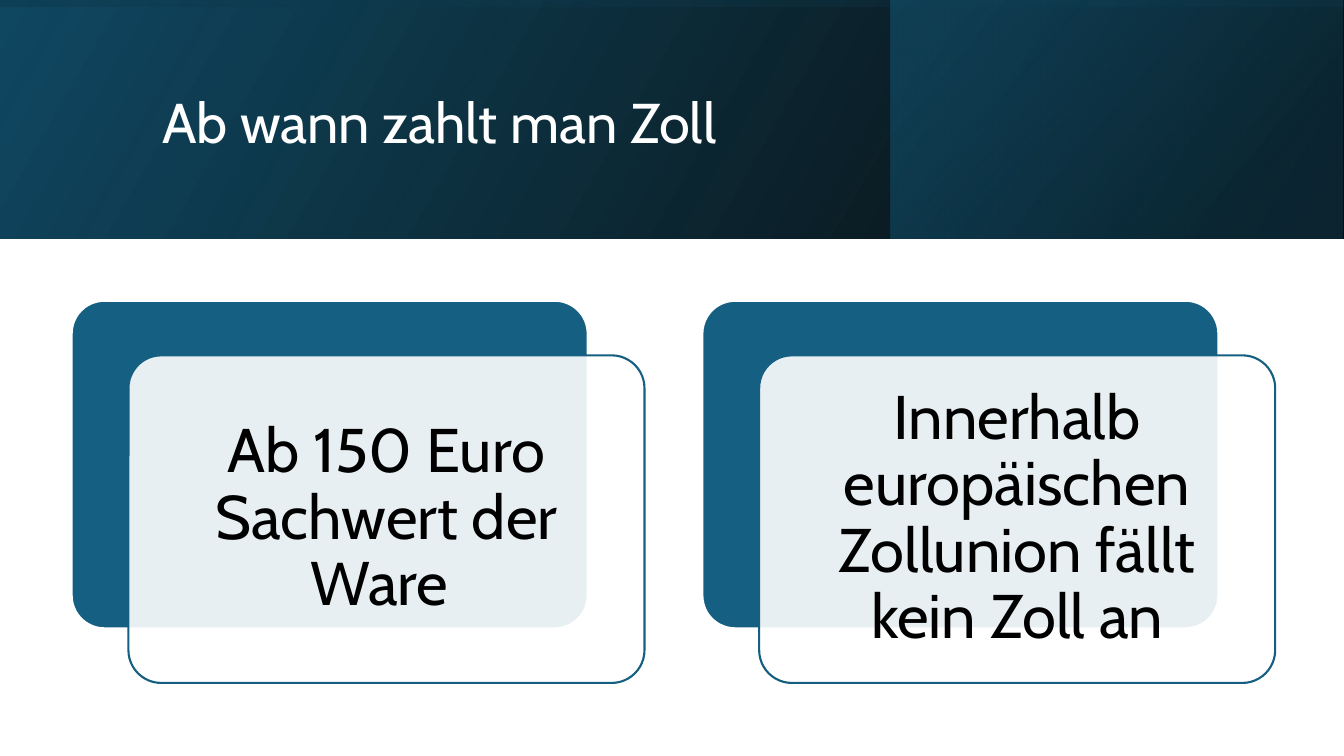
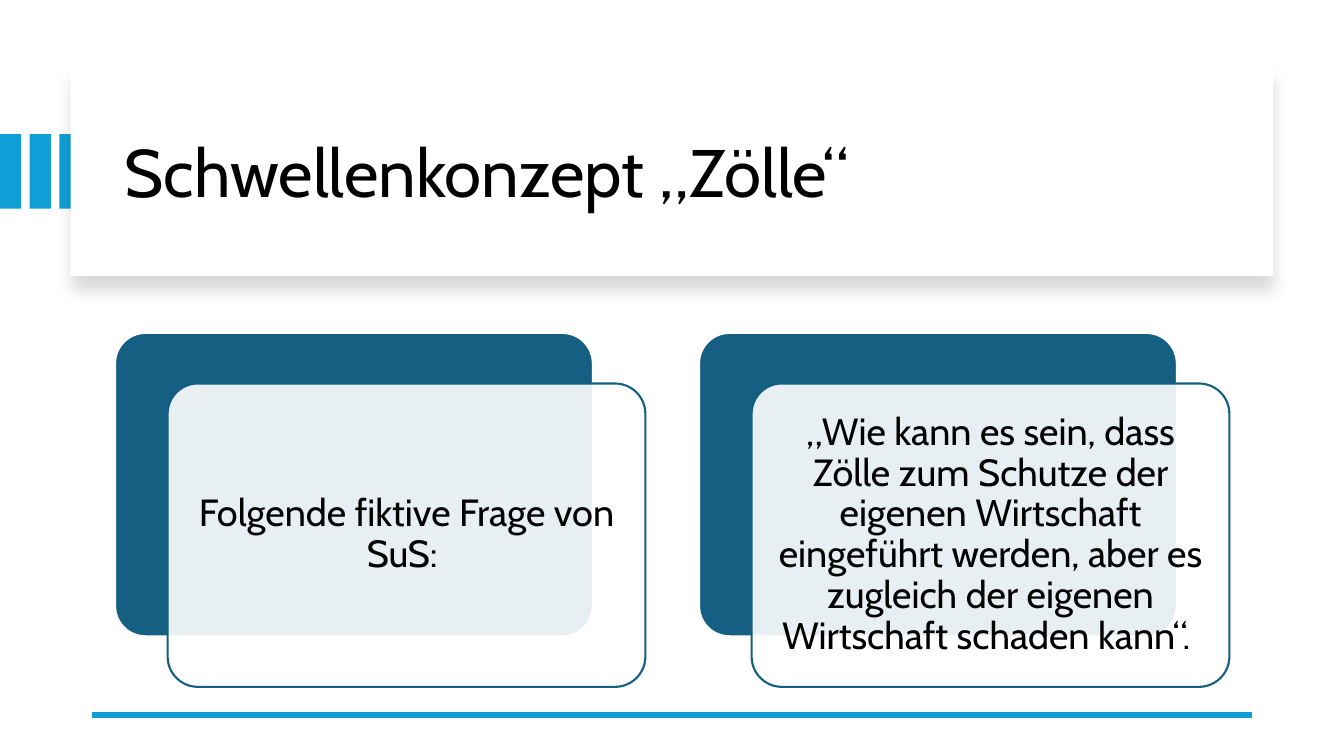
from lxml import etree
from pptx import Presentation
from pptx.dml.color import RGBColor
from pptx.enum.shapes import MSO_CONNECTOR, MSO_SHAPE
from pptx.enum.text import MSO_ANCHOR, PP_ALIGN
from pptx.oxml.ns import qn
from pptx.util import Pt

RECTANGLE = MSO_SHAPE.RECTANGLE
ROUNDED = MSO_SHAPE.ROUNDED_RECTANGLE
STRAIGHT = MSO_CONNECTOR.STRAIGHT
MIDDLE = MSO_ANCHOR.MIDDLE
LEFT, CENTER = PP_ALIGN.LEFT, PP_ALIGN.CENTER

WHITE = RGBColor(0xFF, 0xFF, 0xFF)
BLACK = RGBColor(0x00, 0x00, 0x00)
TEAL = RGBColor(0x15, 0x60, 0x82)
NAVY = RGBColor(0x10, 0x48, 0x62)
DARK_TEAL = RGBColor(0x0B, 0x30, 0x41)
SKY = RGBColor(0x0F, 0x9E, 0xD5)

FONT = "Cabin"
SLIDE_WIDTH, SLIDE_HEIGHT = 960, 540
BAND_HEIGHT = 170.6


def add_box(slide, kind, left, top, width, height, fill=None, line=None):
    shape = slide.shapes.add_shape(kind, Pt(left), Pt(top), Pt(width), Pt(height))
    shape.shadow.inherit = False
    if fill is not None:
        shape.fill.solid()
        shape.fill.fore_color.rgb = fill
    if line is None:
        shape.line.fill.background()
    else:
        shape.line.color.rgb = line
        shape.line.width = Pt(1.5)
    return shape


def write_text(shape, text, size, color, alignment, margins):
    frame = shape.text_frame
    frame_format = {"word_wrap": True, "vertical_anchor": MIDDLE}
    for side, margin in zip(("left", "top", "right", "bottom"), margins):
        frame_format[f"margin_{side}"] = Pt(margin)
    paragraph = frame.paragraphs[0]
    run = paragraph.add_run()
    run.text = text
    run.font.color.rgb = color
    formats = (
        (frame, frame_format),
        (paragraph, {"alignment": alignment, "line_spacing": 0.9}),
        (run.font, {"name": FONT, "size": Pt(size)}),
    )
    for target, values in formats:
        for name, value in values.items():
            setattr(target, name, value)


presentation = Presentation()
presentation.slide_width = Pt(SLIDE_WIDTH)
presentation.slide_height = Pt(SLIDE_HEIGHT)
blank_layout = presentation.slide_layouts[6]
customs_slide = presentation.slides.add_slide(blank_layout)
concept_slide = presentation.slides.add_slide(blank_layout)

turned_left = (SLIDE_WIDTH - BAND_HEIGHT) / 2
bands = [
    ((0, 0, SLIDE_WIDTH, BAND_HEIGHT), 0, 330,
     [(0, BLACK, 96), (100, NAVY, 100)]),
    ((636.5, 0, 322.7, BAND_HEIGHT), 0, 320,
     [(19, DARK_TEAL, 68), (100, TEAL, 48)]),
    ((turned_left, -turned_left, BAND_HEIGHT, SLIDE_WIDTH), 270, 350,
     [(23, NAVY, 16), (99, BLACK, 45)]),
]
for bounds, rotation, angle, stops in bands:
    band = add_box(customs_slide, RECTANGLE, *bounds)
    band.rotation = rotation
    band._element.spPr.find(qn("a:xfrm")).set("flipH", "1")
    band.fill.gradient()
    band.fill.gradient_angle = 360 - angle
    for stop, (position, color, opacity) in zip(band.fill.gradient_stops, stops):
        stop.position = position / 100
        stop.color.rgb = color
    for element, (_, _, opacity) in zip(band._element.spPr.iter(qn("a:srgbClr")), stops):
        etree.SubElement(element, qn("a:alpha")).set("val", str(opacity * 1000))

for stripe_index in range(3):
    add_box(concept_slide, RECTANGLE, stripe_index * 21.2, 95.8, 15.2, 53.3, SKY)

title_panel = add_box(concept_slide, RECTANGLE, 50.4, 48.2, 859, 149, WHITE)
effects = title_panel._element.spPr.find(qn("a:effectLst"))
shadow = etree.SubElement(effects, qn("a:outerShdw"))
shadow_format = {"blurRad": Pt(11), "dist": Pt(10), "dir": 90 * 60000, "algn": "t", "rotWithShape": 0}
for name, value in shadow_format.items():
    shadow.set(name, str(value))
shadow_color = etree.SubElement(shadow, qn("a:srgbClr"))
shadow_color.set("val", str(BLACK))
etree.SubElement(shadow_color, qn("a:alpha")).set("val", "15000")

titles = [
    (customs_slide, (108.7, 27.4, 765.4, 123.8), "Ab wann zahlt man Zoll", 40, WHITE),
    (concept_slide, (82, 64, 801.4, 122.4), "Schwellenkonzept „Zölle“", 48, BLACK),
]
for slide, bounds, text, size, color in titles:
    title = slide.shapes.add_textbox(*[Pt(length) for length in bounds])
    write_text(title, text, size, color, LEFT, (7.2, 3.6, 7.2, 3.6))

baseline = concept_slide.shapes.add_connector(STRAIGHT, Pt(66), Pt(510.5), Pt(894), Pt(510.5))
baseline.line.color.rgb = SKY
baseline.line.width = Pt(4.5)
etree.SubElement(baseline._element.spPr, qn("a:effectLst"))

card_rows = [
    (customs_slide, 51.2, 214.8, 368.6, 234, 44, 13.2, [
        "Ab 150 Euro Sachwert der Ware ",
        "Innerhalb europäischen Zollunion fällt kein Zoll an",
    ]),
    (concept_slide, 82.2, 237.8, 341.3, 216.7, 27, 8.1, [
        "Folgende fiktive Frage von SuS: ",
        "„Wie kann es sein, dass Zölle zum Schutze der eigenen Wirtschaft eingeführt "
        "werden, aber es zugleich der eigenen Wirtschaft schaden kann“. ",
    ]),
]
for slide, row_left, top, width, height, size, margin, texts in card_rows:
    for card_index, text in enumerate(texts):
        left = row_left + card_index * width * 11 / 9
        back = add_box(slide, ROUNDED, left, top, width, height, TEAL, WHITE)
        front = add_box(slide, ROUNDED, left + width * 0.11, top + height / 6,
                        width, height, WHITE, TEAL)
        for card in (back, front):
            card.adjustments[0] = 0.1
        fill_color = front._element.spPr.find(qn("a:solidFill")).find(qn("a:srgbClr"))
        etree.SubElement(fill_color, qn("a:alpha")).set("val", "90000")
        write_text(front, text, size, BLACK, CENTER, (margin,) * 4)

presentation.save("out.pptx")
